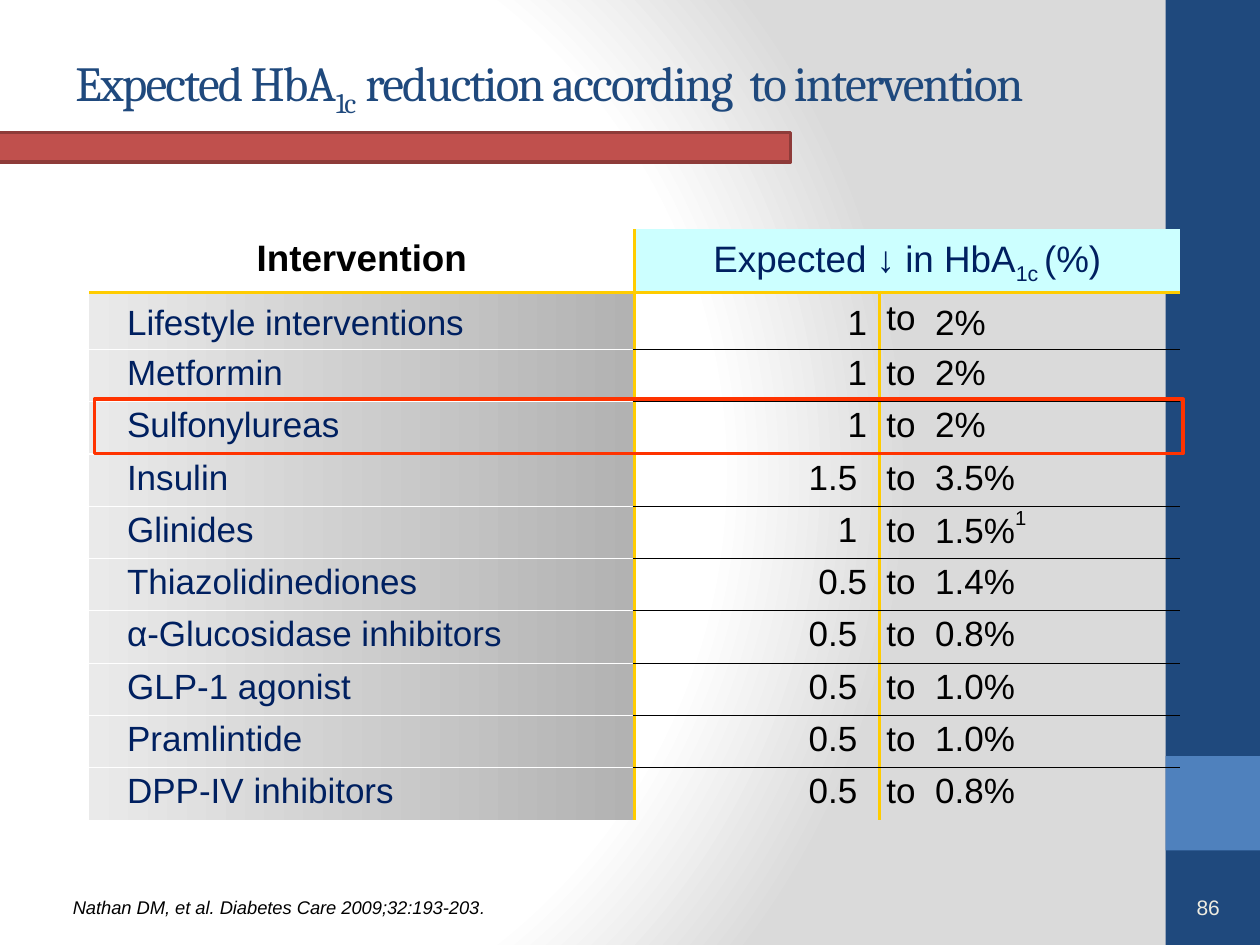
from lxml.etree import SubElement
from pptx import Presentation
from pptx.dml.color import RGBColor
from pptx.enum.shapes import MSO_SHAPE
from pptx.enum.text import MSO_ANCHOR, PP_ALIGN
from pptx.oxml import parse_xml
from pptx.oxml.ns import qn
from pptx.util import Pt

NAMESPACE = 'xmlns:a="http://schemas.openxmlformats.org/drawingml/2006/main"'
PLAIN_TABLE_STYLE = "{2D5ABB26-0587-4C30-8999-92F81FD0307C}"
NAVY, BLACK, YELLOW = "002060", "000000", "FFCC00"
COLUMN_WIDTHS = [311.5, 140.2, 24.5, 147.3]
ROW_HEIGHTS = [36, 32.5] + [29.9] * 9
INTERVENTIONS = [
    ("Lifestyle interventions", "1", "2%"),
    ("Metformin", "1", "2%"),
    ("Sulfonylureas", "1", "2%"),
    ("Insulin", "1.5 ", "3.5%"),
    ("Glinides", "1 ", "1.5%"),
    ("Thiazolidinediones", "0.5", "1.4%"),
    ("α-Glucosidase inhibitors", "0.5 ", "0.8%"),
    ("GLP-1 agonist", "0.5 ", "1.0%"),
    ("Pramlintide", "0.5 ", "1.0%"),
    ("DPP-IV inhibitors", "0.5 ", "0.8%"),
]
FOOTNOTES = {"Glinides": "1"}


def color(hex_string):
    return RGBColor.from_string(hex_string)


def add_run(paragraph, text, size, hex_color, font="Arial", bold=False,
            italic=False, baseline=0, spacing=0):
    """Baseline is in percent, letter spacing in points."""
    run = paragraph.add_run()
    run.text = text
    run.font.name = font
    run.font.size = Pt(size)
    run.font.bold = bold
    run.font.italic = italic
    run.font.color.rgb = color(hex_color)
    properties = run.font._element
    if baseline:
        properties.set("baseline", str(baseline * 1000))
    if spacing:
        properties.set("spc", str(spacing * 100))


def set_background(slide):
    slide.background.fill.gradient()
    gradient = slide.element.find(".//" + qn("a:gradFill"))
    stops = "".join(
        f'<a:gs pos="{position * 1000}"><a:srgbClr val="{value}"/></a:gs>'
        for position, value in [(0, "FFFFFF"), (75, "FFFFFF"), (100, "DADADA")])
    gradient.getparent().replace(gradient, parse_xml(
        f'<a:gradFill {NAMESPACE} rotWithShape="1"><a:gsLst>{stops}</a:gsLst>'
        '<a:path path="circle"><a:fillToRect l="20000" t="50000" r="100000" '
        'b="50000"/></a:path></a:gradFill>'))


def add_block(slide, preset, box, fill=None, line=None, line_width=2.25):
    shape = slide.shapes.add_shape(preset, *map(Pt, box))
    shape.shadow.inherit = False
    if fill:
        shape.fill.solid()
        shape.fill.fore_color.rgb = color(fill)
    else:
        shape.fill.background()
    if line:
        shape.line.color.rgb = color(line)
        shape.line.width = Pt(line_width)
    else:
        shape.line.fill.background()


def add_text(slide, box, anchor=MSO_ANCHOR.MIDDLE, alignment=PP_ALIGN.LEFT,
             margin=7.2):
    """Add an empty text box and return its paragraph."""
    frame = slide.shapes.add_textbox(*map(Pt, box)).text_frame
    frame.word_wrap = True
    frame.vertical_anchor = anchor
    frame.margin_left = frame.margin_right = Pt(margin)
    frame.margin_top = frame.margin_bottom = Pt(3.6)
    paragraph = frame.paragraphs[0]
    paragraph.alignment = alignment
    return paragraph


def set_borders(cell, **borders):
    """Draw the given sides (L, R, T, B), each a pair of colour and width."""
    properties = cell._tc.get_or_add_tcPr()
    sides = [side for side in "LRTB" if side in borders]
    for index, side in enumerate(sides):
        hex_color, width = borders[side]
        properties.insert(index, parse_xml(
            f'<a:ln{side} {NAMESPACE} w="{Pt(width)}"><a:solidFill>'
            f'<a:srgbClr val="{hex_color}"/></a:solidFill></a:ln{side}>'))


def format_cell(cell, alignment, top=3.6, bottom=3.6, side=7.2):
    """Lay out a table cell and return its paragraph."""
    cell.vertical_anchor = MSO_ANCHOR.MIDDLE
    cell.margin_left = cell.margin_right = Pt(side)
    cell.margin_top, cell.margin_bottom = Pt(top), Pt(bottom)
    cell.fill.background()
    paragraph = cell.text_frame.paragraphs[0]
    paragraph.alignment = alignment
    paragraph.line_spacing = 0.85
    paragraph.space_before = Pt(0)
    before = paragraph._p.pPr.find(qn("a:spcBef"))
    before.clear()
    SubElement(before, qn("a:spcPct"), val="55000")
    return paragraph


def fill_header(table):
    heavy = (YELLOW, 2.25)
    table.cell(0, 1).merge(table.cell(0, 3))
    add_run(format_cell(table.cell(0, 0), PP_ALIGN.CENTER),
            "Intervention", 21, BLACK, bold=True)
    reduction = table.cell(0, 1)
    paragraph = format_cell(reduction, PP_ALIGN.CENTER)
    add_run(paragraph, "Expected ↓ in HbA", 21, NAVY)
    add_run(paragraph, "1c ", 21, NAVY, baseline=-25)
    add_run(paragraph, "(%)", 21, NAVY)
    reduction.fill.solid()
    reduction.fill.fore_color.rgb = color("CCFFFF")
    set_borders(table.cell(0, 0), R=heavy, B=heavy)
    set_borders(reduction, L=heavy, B=heavy)
    for column in (2, 3):
        set_borders(table.cell(0, column), B=heavy)


def fill_row(table, row, name, low, high):
    heavy = (YELLOW, 2.25)
    name_cell, low_cell, to_cell, high_cell = table.rows[row].cells
    top = 8.64 if row == 1 else 3.6
    paragraph = format_cell(name_cell, PP_ALIGN.LEFT, top)
    paragraph._p.pPr.set("marL", str(Pt(14.4)))
    paragraph._p.pPr.set("indent", "0")
    add_run(paragraph, name, 20, NAVY)
    add_run(format_cell(low_cell, PP_ALIGN.RIGHT, top), low, 20, BLACK)
    add_run(format_cell(to_cell, PP_ALIGN.CENTER, 2.88, 2.88, 0), "to", 20, BLACK)
    paragraph = format_cell(high_cell, PP_ALIGN.LEFT, top)
    add_run(paragraph, high, 20, BLACK)
    if name in FOOTNOTES:
        add_run(paragraph, FOOTNOTES[name], 20, BLACK, baseline=50)

    name_cell.fill.gradient()
    name_cell.fill.gradient_angle = 0
    for stop, value in zip(name_cell.fill.gradient_stops, ["EAEAEA", "B2B2B2"]):
        stop.color.rgb = color(value)

    for column, cell in enumerate(table.rows[row].cells):
        thin = ("FFFFFF" if column == 0 else BLACK, 0.75)
        borders = {"T": heavy if row == 1 else thin}
        if row < len(INTERVENTIONS):
            borders["B"] = thin
        if column < 2:
            borders["RL"[column]] = heavy
        set_borders(cell, **borders)


def add_intervention_table(slide):
    frame = slide.shapes.add_table(
        len(ROW_HEIGHTS), len(COLUMN_WIDTHS), Pt(51), Pt(131),
        Pt(sum(COLUMN_WIDTHS)), Pt(sum(ROW_HEIGHTS)))
    table = frame.table
    table.first_row = table.horz_banding = False
    table._tbl.tblPr.find(qn("a:tableStyleId")).text = PLAIN_TABLE_STYLE
    for column, width in zip(table.columns, COLUMN_WIDTHS):
        column.width = Pt(width)
    for row, height in zip(table.rows, ROW_HEIGHTS):
        row.height = Pt(height)
    fill_header(table)
    for row, intervention in enumerate(INTERVENTIONS, 1):
        fill_row(table, row, *intervention)


def main():
    presentation = Presentation()
    presentation.slide_width, presentation.slide_height = Pt(720), Pt(540)
    slide = presentation.slides.add_slide(presentation.slide_layouts[6])
    set_background(slide)
    add_block(slide, MSO_SHAPE.RECTANGLE, (666, 0, 54, 540), "1F497D")
    add_block(slide, MSO_SHAPE.RECTANGLE, (666, 432, 54, 54), "4F81BD")

    page_number = add_text(slide, (536.4, 509.8, 167.8, 16.6),
                           alignment=PP_ALIGN.RIGHT)
    add_run(page_number, "86", 12, "EEECE1")

    title = add_text(slide, (36, 33.1, 648, 31.7))
    for text, baseline in [("Expected HbA", 0), ("1c", -25),
                           (" reduction according  to intervention", 0)]:
        add_run(title, text, 28, "1F497D", "Cambria", baseline=baseline, spacing=-1)

    add_intervention_table(slide)

    citation = add_text(slide, (35.3, 509, 306.7, 19.4), MSO_ANCHOR.BOTTOM, margin=3.6)
    citation.line_spacing = 0.97
    for text, size in [(" ", 10), (".", 10)]:
        if text == ".":
            add_run(citation, "Nathan DM, et al. Diabetes Care 2009;32:193-203",
                    10.5, BLACK, italic=True)
        add_run(citation, text, size, BLACK, italic=True)

    add_block(slide, MSO_SHAPE.RECTANGLE, (54, 228.2, 622, 31), line="FF3300")
    add_block(slide, MSO_SHAPE.MATH_MINUS, (-84.2, 48.2, 617.8, 72),
              "C0504D", "8E3B39", 2)
    presentation.save("out.pptx")


if __name__ == "__main__":
    main()
